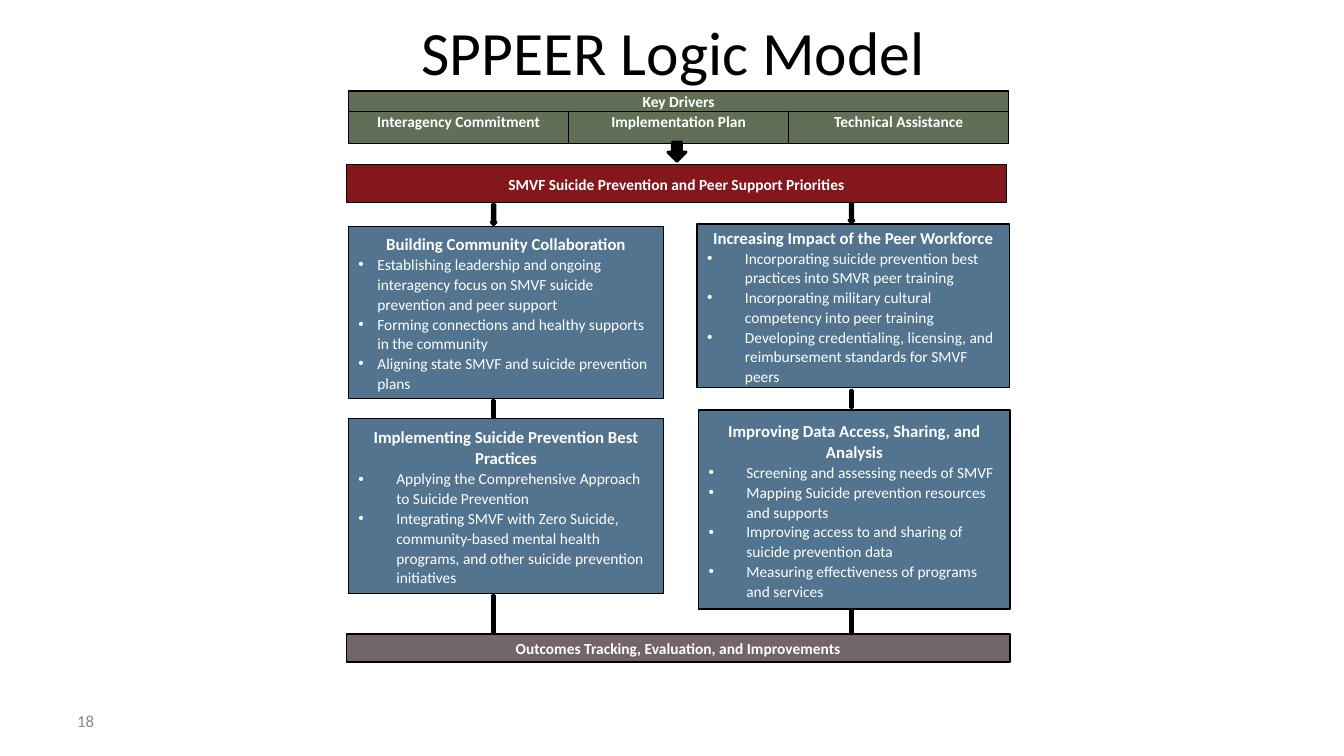
from lxml.etree import SubElement
from pptx import Presentation
from pptx.dml.color import RGBColor
from pptx.enum.shapes import MSO_SHAPE as Shape
from pptx.enum.text import MSO_ANCHOR as Anchor, PP_ALIGN as Align
from pptx.oxml.ns import qn
from pptx.util import Pt

COLORS = {
    "black": "000000",
    "white": "FFFFFF",
    "number": "898989",
    "drivers": "616F57",
    "priorities": "84171C",
    "strategy": "52748E",
    "outcomes": "716569",
}
LEFT_FLOW, RIGHT_FLOW = 352.6, 608.2

DRIVERS = ["Interagency Commitment", "Implementation Plan", "Technical Assistance"]

# Each strategy: frame, bullet indent, heading, bullets
STRATEGIES = [
    ((249, 162, 225, 122.5), 13.5, "Building Community Collaboration", [
        "Establishing leadership and ongoing interagency focus on SMVF suicide prevention and peer support",
        "Forming connections and healthy supports in the community",
        "Aligning state SMVF and suicide prevention plans",
    ]),
    ((249, 299, 225, 125), 27, "Implementing Suicide Prevention Best Practices", [
        "Applying the Comprehensive Approach to Suicide Prevention",
        "Integrating SMVF with Zero Suicide, community-based mental health programs, "
        "and other suicide prevention initiatives",
    ]),
    ((498, 160, 223, 117), 27, "Increasing Impact of the Peer Workforce", [
        "Incorporating suicide prevention best practices into SMVR peer training",
        "Incorporating military cultural competency into peer training",
        "Developing credentialing, licensing, and reimbursement standards for SMVF peers",
    ]),
    ((499, 293, 222.5, 142), 27, "Improving Data Access, Sharing, and Analysis", [
        "Screening and assessing needs of SMVF",
        "Mapping Suicide prevention resources and supports",
        "Improving access to and sharing of suicide prevention data",
        "Measuring effectiveness of programs and services",
    ]),
]


def rgb(name):
    return RGBColor.from_string(COLORS[name])


class LogicModelSlide:
    font_name = "Calibri"
    line_spacing = 1.07

    def __init__(self, deck):
        self.slide = deck.slides.add_slide(deck.slide_layouts[5])
        self.shapes = self.slide.shapes

    def set_text(self, paragraph, text, size=11, color="white", bold=False,
                 align=Align.LEFT, spacing=line_spacing):
        paragraph.text = text
        paragraph.alignment = align
        paragraph.line_spacing = spacing
        font = paragraph.font
        font.name, font.size, font.bold = self.font_name, Pt(size), bold
        font.color.rgb = rgb(color)

    def title(self, text, frame):
        title = self.shapes.title
        title.left, title.top, title.width, title.height = map(Pt, frame)
        title.text_frame.vertical_anchor = Anchor.MIDDLE
        self.set_text(title.text_frame.paragraphs[0], text, 44, "black", spacing=1)

    def page_number(self, text, frame):
        number = self.shapes.add_textbox(*map(Pt, frame)).text_frame
        number.word_wrap = True
        number.vertical_anchor = Anchor.MIDDLE
        self.set_text(number.paragraphs[0], text, 12, "number", spacing=1)

    def block(self, frame, color, kind=Shape.RECTANGLE, line=1):
        block = self.shapes.add_shape(kind, *map(Pt, frame))
        block.shadow.inherit = False
        block.fill.solid()
        block.fill.fore_color.rgb = rgb(color)
        block.line.color.rgb = rgb("black")
        block.line.width = Pt(line)
        return block

    def panel(self, frame, color, heading, size=11):
        body = self.block(frame, color).text_frame
        body.word_wrap = True
        body.vertical_anchor = Anchor.MIDDLE
        self.set_text(body.paragraphs[0], heading, size, bold=True, align=Align.CENTER)
        return body

    def strategy(self, frame, indent, heading, bullets):
        body = self.panel(frame, "strategy", heading, 12)
        for bullet in bullets:
            paragraph = body.add_paragraph()
            properties = paragraph._p.get_or_add_pPr()
            properties.set("marL", str(Pt(indent)))
            properties.set("indent", str(-Pt(indent)))
            SubElement(properties, qn("a:buFont"), typeface="Arial")
            SubElement(properties, qn("a:buChar"), char="•")
            self.set_text(paragraph, bullet)

    def arrow(self, center, top, width, height):
        self.block((center - width / 2, top, width, height), "black", Shape.DOWN_ARROW, 2)

    def link(self, center, middle, length):
        """Draw a vertical bar as a minus sign turned upright."""
        frame = (center - length / 2, middle - 3, length, 6)
        self.block(frame, "black", Shape.MATH_MINUS, 2).rotation = 90

    def cell(self, cell, text):
        cell.margin_left = cell.margin_right = Pt(5)
        cell.margin_top = cell.margin_bottom = 0
        properties = cell._tc.get_or_add_tcPr()
        for side in ("lnL", "lnR", "lnT", "lnB"):
            border = SubElement(properties, qn(f"a:{side}"), w=str(Pt(1)))
            fill = SubElement(border, qn("a:solidFill"))
            SubElement(fill, qn("a:srgbClr"), val=COLORS["black"])
        cell.fill.solid()
        cell.fill.fore_color.rgb = rgb("drivers")
        self.set_text(cell.text_frame.paragraphs[0], text, bold=True, align=Align.CENTER)

    def drivers_table(self, frame, heading, drivers, row_heights):
        columns = len(drivers)
        table = self.shapes.add_table(2, columns, *map(Pt, frame)).table
        table.horz_banding = False
        for row, height in zip(table.rows, row_heights):
            row.height = Pt(height)
        table.cell(0, 0).merge(table.cell(0, columns - 1))
        headings = [heading] + [""] * (columns - 1)
        for row, texts in enumerate((headings, drivers)):
            for column, text in enumerate(texts):
                self.cell(table.cell(row, column), text)


def main():
    deck = Presentation()
    deck.slide_width, deck.slide_height = Pt(960), Pt(540)
    model = LogicModelSlide(deck)

    model.title("SPPEER Logic Model", (294, -4, 378, 80.5))
    model.page_number("18", (48, 500.5, 224, 28.75))
    model.drivers_table((249, 65, 471.6, 37.5), "Key Drivers", DRIVERS, (14.5, 23))
    model.panel((247.5, 117.5, 471.6, 27.25), "priorities",
                "SMVF Suicide Prevention and Peer Support Priorities")
    for strategy in STRATEGIES:
        model.strategy(*strategy)

    model.arrow(483.5, 101.5, 13, 13.7)
    model.arrow(LEFT_FLOW, 146, 3.6, 14.5)
    model.arrow(RIGHT_FLOW, 145.5, 3.6, 13.7)
    for center, middle, length in (
        (LEFT_FLOW, 292.3, 16.6),
        (RIGHT_FLOW, 285.1, 16.6),
        (LEFT_FLOW, 440, 40.3),
        (RIGHT_FLOW, 445, 24.5),
    ):
        model.link(center, middle, length)
    model.panel((247.5, 453, 474, 20), "outcomes",
                "Outcomes Tracking, Evaluation, and Improvements")

    deck.save("out.pptx")


if __name__ == "__main__":
    main()
